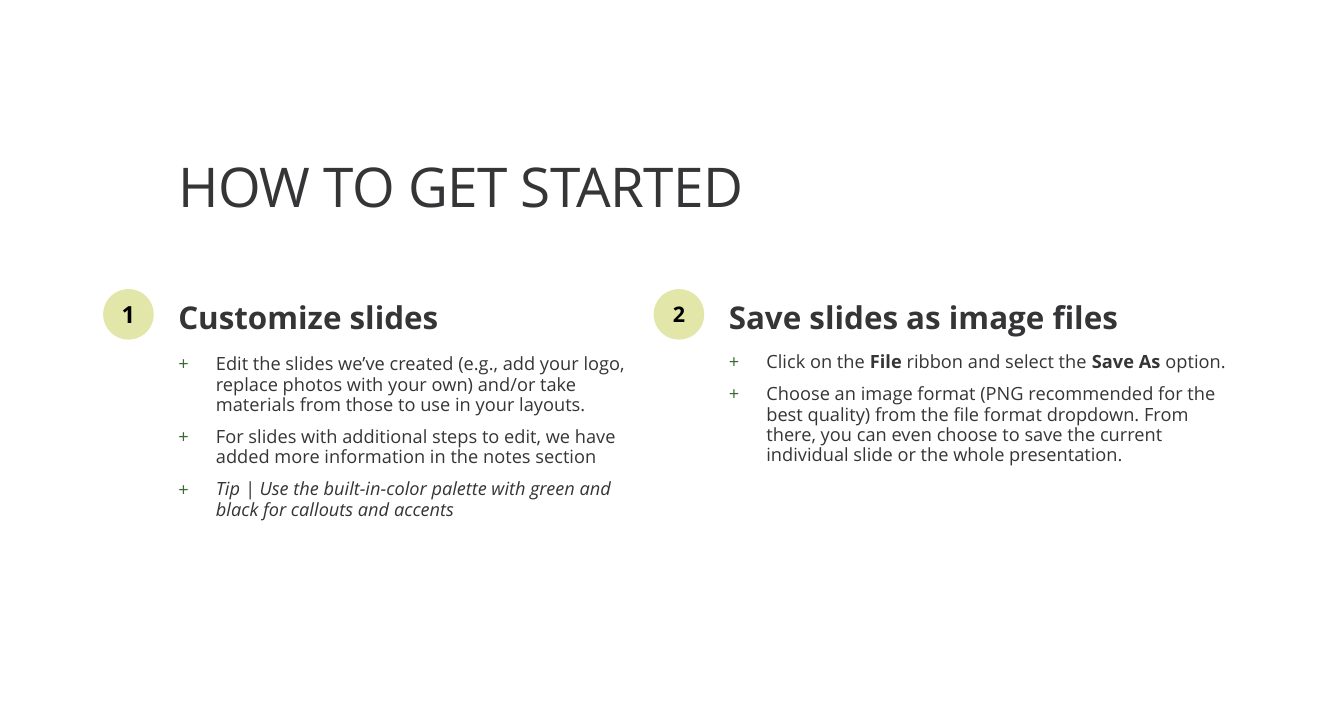
from dataclasses import dataclass

from lxml import etree
from pptx import Presentation
from pptx import util as u
from pptx.dml.color import RGBColor
from pptx.enum import shapes, text
from pptx.oxml import ns

INK = RGBColor(0x35, 0x35, 0x37)
BLACK = RGBColor(0x00, 0x00, 0x00)
LIME = RGBColor(0xE3, 0xE6, 0xA9)
GREEN = RGBColor(0x39, 0x6A, 0x32)

FONT = "Open Sans"
HEADING_TOP, HEADING_HEIGHT = 2.58, 0.58
BADGE_TOP, BADGE_SIZE, BADGE_OFFSET = 2.69, 0.47, -0.6
INDENT = 0.35

TITLE = {"size": u.Pt(36.7)}
HEADING = {"size": u.Pt(21), "bold": True}
BODY = {"size": u.Pt(12.2)}


@dataclass
class Span:
    words: str
    bold: bool = False
    italic: bool = False


@dataclass
class Step:
    number: str
    number_size: float
    left: float
    heading: str
    heading_width: float
    body_top: float
    body_width: float
    body_height: float
    bullets: list[list[Span]]


STEPS = [
    Step("1", 15.8, 1.56, "Customize slides", 4.44, 3.25, 4.44, 2.34, [
        [Span("Edit the slides we’ve created (e.g., add your logo, replace photos "
              "with your own) and/or take materials from those to use in your layouts.")],
        [Span("For slides with additional steps to edit, we have added more "
              "information in the notes section")],
        [Span("Tip | Use the built-in-color palette with green and black for "
              "callouts and accents", italic=True)],
    ]),
    Step("2", 14.4, 6.68, "Save slides as image files", 4.65, 3.23, 4.87, 2.78, [
        [Span("Click on the "), Span("File", bold=True),
         Span(" ribbon and select the "), Span("Save As", bold=True), Span(" option.")],
        [Span("Choose an image format (PNG recommended for the best quality) from "
              "the file format dropdown. From there, you can even choose to save "
              "the current individual slide or the whole presentation.")],
    ]),
]


def add_run(para, words: str, style: dict, color: RGBColor = INK):
    run = para.add_run()
    run.text = words
    for name, value in {"name": FONT, **style}.items():
        setattr(run.font, name, value)
    run.font.color.rgb = color
    return run


def add_box(page, left: float, top: float, width: float, height: float,
            anchor=text.MSO_ANCHOR.TOP, margin: float = 0.05):
    box = page.shapes.add_textbox(*map(u.Inches, (left, top, width, height)))
    frame = box.text_frame
    settings = {"word_wrap": True, "auto_size": text.MSO_AUTO_SIZE.NONE,
                "vertical_anchor": anchor, "margin_top": u.Inches(margin),
                "margin_bottom": u.Inches(margin)}
    for name, value in settings.items():
        setattr(frame, name, value)
    return frame


def add_bullet(para) -> None:
    properties = para._p.get_or_add_pPr()
    properties.set("marL", str(u.Inches(INDENT)))
    properties.set("indent", str(-u.Inches(INDENT)))
    color = etree.SubElement(properties, ns.qn("a:buClr"))
    etree.SubElement(color, ns.qn("a:srgbClr")).set("val", str(GREEN))
    etree.SubElement(properties, ns.qn("a:buFont")).set("typeface", FONT)
    etree.SubElement(properties, ns.qn("a:buChar")).set("char", "+")


def add_badge(page, step: Step) -> None:
    badge = page.shapes.add_shape(
        shapes.MSO_SHAPE.OVAL, u.Inches(step.left + BADGE_OFFSET),
        u.Inches(BADGE_TOP), u.Inches(BADGE_SIZE), u.Inches(BADGE_SIZE))
    badge.shadow.inherit = False
    badge.fill.solid()
    badge.fill.fore_color.rgb = LIME
    badge.line.fill.background()
    frame = badge.text_frame
    settings = {"word_wrap": False, "vertical_anchor": text.MSO_ANCHOR.MIDDLE,
                "margin_left": 0, "margin_right": 0,
                "margin_top": 0, "margin_bottom": 0}
    for name, value in settings.items():
        setattr(frame, name, value)
    para = frame.paragraphs[0]
    para.alignment = text.PP_ALIGN.CENTER
    add_run(para, step.number, {"size": u.Pt(step.number_size), "bold": True}, BLACK)


def add_step(page, step: Step) -> None:
    # Heading
    heading = add_box(page, step.left, HEADING_TOP, step.heading_width,
                      HEADING_HEIGHT, text.MSO_ANCHOR.BOTTOM, 0.04)
    add_run(heading.paragraphs[0], step.heading, HEADING)

    # Bulleted instructions
    body = add_box(page, step.left, step.body_top, step.body_width, step.body_height)
    for index, spans in enumerate(step.bullets):
        para = body.add_paragraph() if index else body.paragraphs[0]
        para.line_spacing = 0.93
        if index:
            para.space_before = u.Pt(7.9)
        add_bullet(para)
        for span in spans:
            add_run(para, span.words, {**BODY, "bold": span.bold, "italic": span.italic})

    # Numbered circle
    add_badge(page, step)


def main() -> None:
    deck = Presentation()
    deck.slide_width, deck.slide_height = u.Inches(12.5), u.Inches(6.56)
    page = deck.slides.add_slide(deck.slide_layouts[6])

    # Title
    para = add_box(page, 1.56, 1.45, 9.38, 0.75, margin=0.02).paragraphs[0]
    para.line_spacing = 0.95
    title = add_run(para, "HOW TO GET STARTED", TITLE)
    title.font._element.set("spc", "-40")

    # Two columns of steps
    for step in STEPS:
        add_step(page, step)

    deck.save("out.pptx")


if __name__ == "__main__":
    main()
